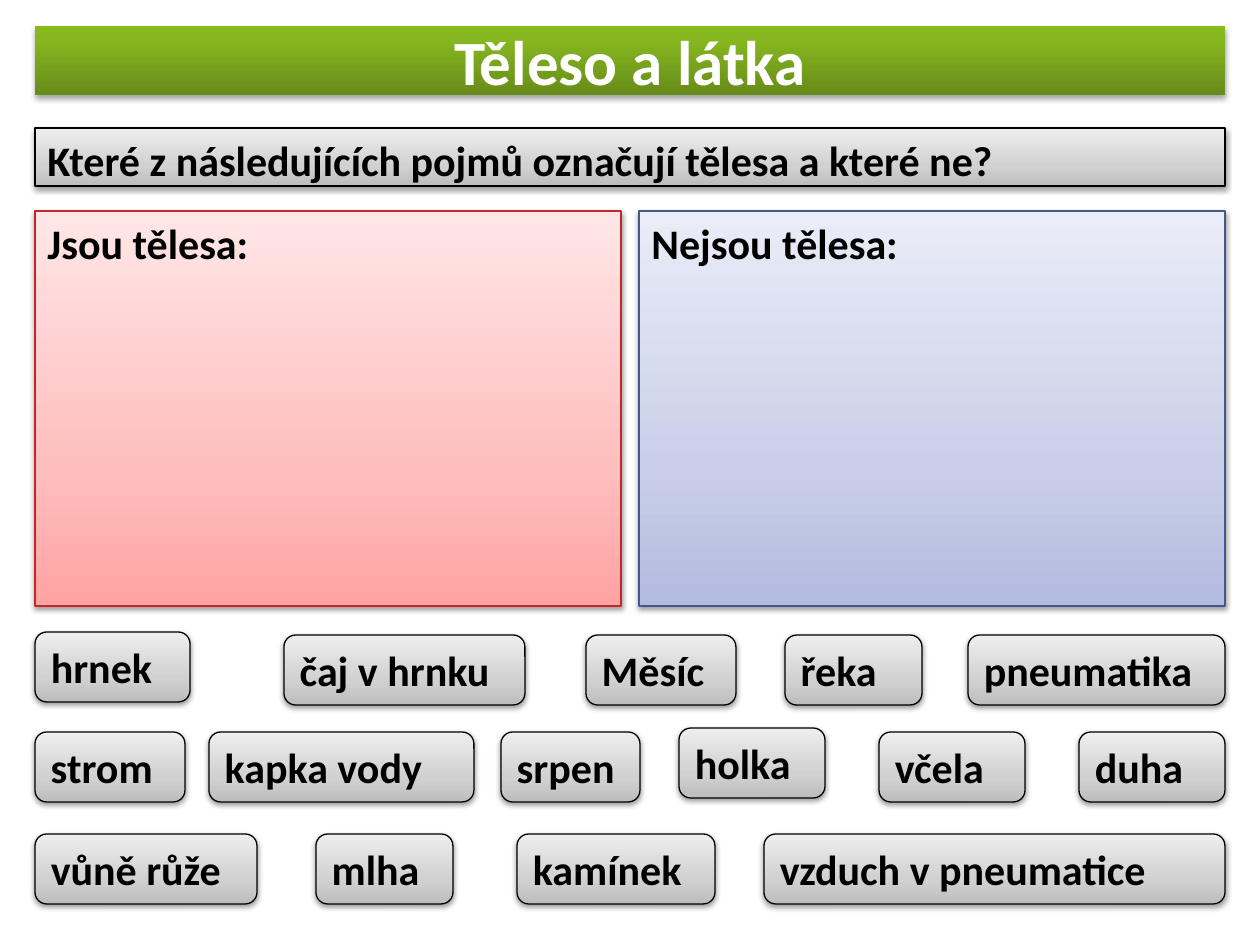
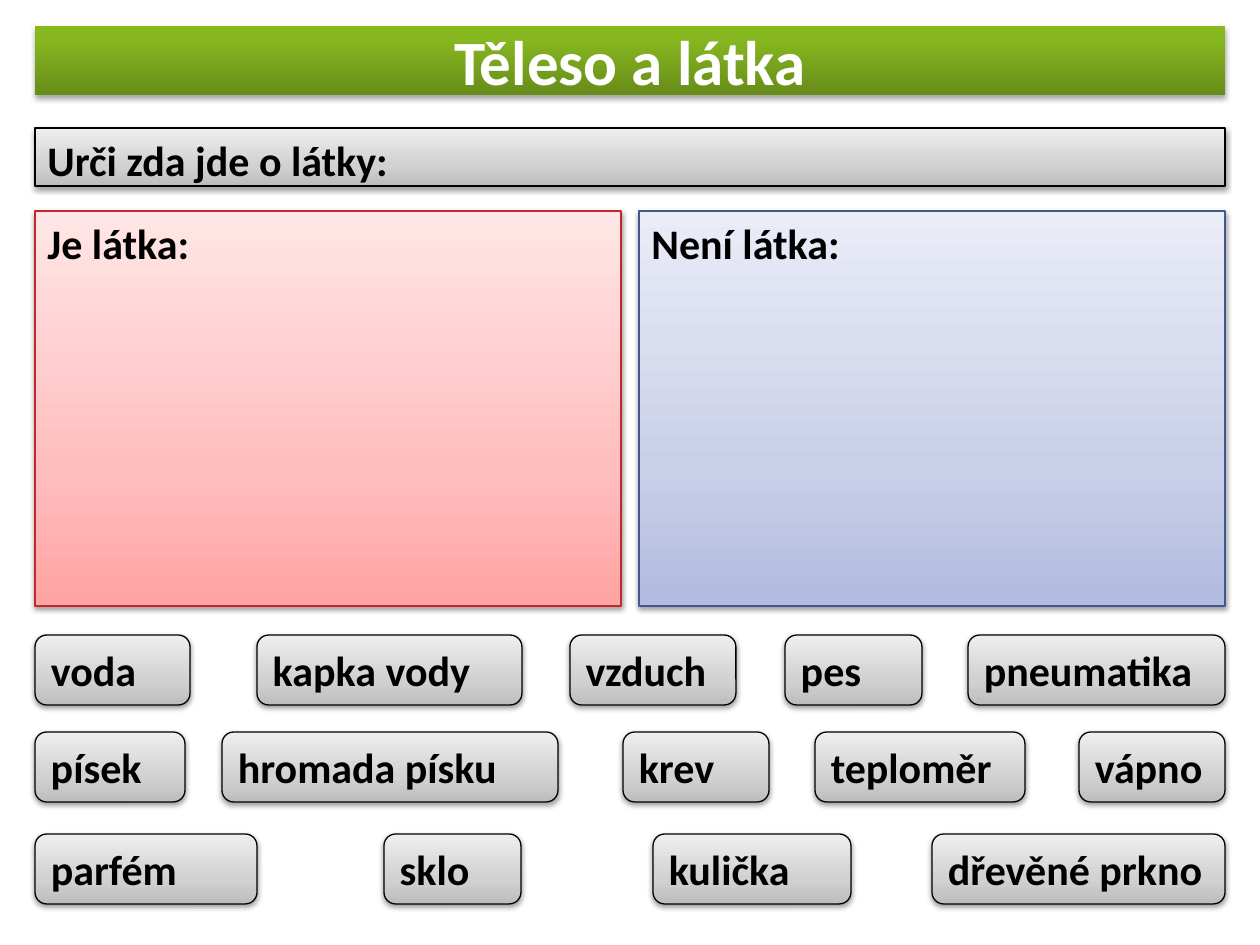
"""Build two Czech sorting exercises about bodies and substances."""
from dataclasses import dataclass

from lxml.etree import SubElement
from pptx import Presentation
from pptx.dml.color import RGBColor
from pptx.enum.shapes import MSO_SHAPE as Shape
from pptx.enum.text import MSO_ANCHOR as Anchor, PP_ALIGN as Align
from pptx.oxml.ns import qn
from pptx.util import Emu, Pt


@dataclass(frozen=True)
class Theme:
    font: str = "Calibri"
    title_size: int = 36
    body_size: int = 24
    line_width: float = 0.75
    white: str = "FFFFFF"
    black: str = "000000"
    red_line: str = "C22829"
    blue_line: str = "44578C"
    green: tuple = ((0, "678C19"), (80, "86B620"), (100, "88BA1D"))
    grey: tuple = ((0, "BDBDBD"), (35, "D1D1D1"), (100, "EEEEEE"))
    red: tuple = ((0, "FFA3A3"), (35, "FFBEBE"), (100, "FFE6E6"))
    blue: tuple = ((0, "B2BBE0"), (35, "C9CFE8"), (100, "EAECF7"))


THEME = Theme()
PX = 914400 / 126
LEFT, WIDTH = 35, 1190
PANEL_WIDTH, PANEL_GAP = 586, 18
CHIP_HEIGHT = 70
ROW_TOPS = (635, 732, 834)
RAISED = {"hrnek": 3, "holka": 4}

EXERCISES = [
    {
        "task": "Které z následujících pojmů označují tělesa a které ne?",
        "panels": ("Jsou tělesa:", "Nejsou tělesa:"),
        "rows": (
            (("hrnek", 35, 155), ("čaj v hrnku", 284, 241), ("Měsíc", 586, 150),
             ("řeka", 785, 137), ("pneumatika", 968, 257)),
            (("strom", 35, 150), ("kapka vody", 209, 265), ("srpen", 501, 139),
             ("holka", 679, 146), ("včela", 879, 146), ("duha", 1079, 146)),
            (("vůně růže", 35, 222), ("mlha", 316, 137), ("kamínek", 517, 198),
             ("vzduch v pneumatice", 764, 461)),
        ),
    },
    {
        "task": "Urči zda jde o látky:",
        "panels": ("Je látka:", "Není látka:"),
        "rows": (
            (("voda", 35, 155), ("kapka vody", 257, 265), ("vzduch", 570, 166),
             ("pes", 785, 137), ("pneumatika", 968, 257)),
            (("písek", 35, 150), ("hromada písku", 222, 336), ("krev", 623, 146),
             ("teploměr", 815, 210), ("vápno", 1079, 146)),
            (("parfém", 35, 222), ("sklo", 384, 137), ("kulička", 653, 198),
             ("dřevěné prkno", 932, 293)),
        ),
    },
]


def style_surface(shape, gradient, line_color, shadow_alpha, shadow_distance):
    shape.fill.gradient()
    shape.fill.gradient_angle = 90
    properties = shape._element.spPr
    stops = properties.find(qn("a:gradFill")).find(qn("a:gsLst"))
    for stop in list(stops):
        stops.remove(stop)
    for position, color in gradient:
        stop = SubElement(stops, qn("a:gs"), pos=str(position * 1000))
        SubElement(stop, qn("a:srgbClr"), val=color)

    if line_color:
        shape.line.color.rgb = RGBColor.from_string(line_color)
        shape.line.width = Pt(THEME.line_width)
    else:
        shape.line.fill.background()

    shape.shadow.inherit = False
    shadow = SubElement(properties.find(qn("a:effectLst")), qn("a:outerShdw"),
                        blurRad="40000", dist=str(shadow_distance),
                        dir="5400000", rotWithShape="0")
    shadow_color = SubElement(shadow, qn("a:srgbClr"), val=THEME.black)
    SubElement(shadow_color, qn("a:alpha"), val=str(shadow_alpha * 1000))


def add_box(slide, text, box, gradient, line_color=THEME.black, kind=Shape.RECTANGLE,
            title=False):
    shape = slide.shapes.add_shape(kind, *[Emu(round(length * PX)) for length in box])
    style_surface(shape, gradient, line_color, *((35, 23000) if title else (38, 20000)))
    frame = shape.text_frame
    frame.word_wrap = True
    frame.vertical_anchor = Anchor.MIDDLE if title else Anchor.TOP
    paragraph = frame.paragraphs[0]
    paragraph.alignment = Align.CENTER if title else Align.LEFT
    run = paragraph.add_run()
    run.text = text
    run.font.name = THEME.font
    run.font.bold = True
    run.font.size = Pt(THEME.title_size if title else THEME.body_size)
    run.font.color.rgb = RGBColor.from_string(THEME.white if title else THEME.black)


presentation = Presentation()
presentation.slide_width = Emu(round(1260 * PX))
presentation.slide_height = Emu(round(945 * PX))

for exercise in EXERCISES:
    slide = presentation.slides.add_slide(presentation.slide_layouts[6])
    add_box(slide, "Těleso a látka", (LEFT, 26, WIDTH, 69), THEME.green, None, title=True)
    add_box(slide, exercise["task"], (LEFT, 128, WIDTH, 58), THEME.grey)

    panel_styles = ((THEME.red, THEME.red_line), (THEME.blue, THEME.blue_line))
    for column, (label, style) in enumerate(zip(exercise["panels"], panel_styles)):
        left = LEFT + column * (PANEL_WIDTH + PANEL_GAP)
        add_box(slide, label, (left, 211, PANEL_WIDTH, 395), *style)

    for top, chips in zip(ROW_TOPS, exercise["rows"]):
        for word, left, width in chips:
            box = (left, top - RAISED.get(word, 0), width, CHIP_HEIGHT)
            add_box(slide, word, box, THEME.grey, kind=Shape.ROUNDED_RECTANGLE)

presentation.save("out.pptx")
